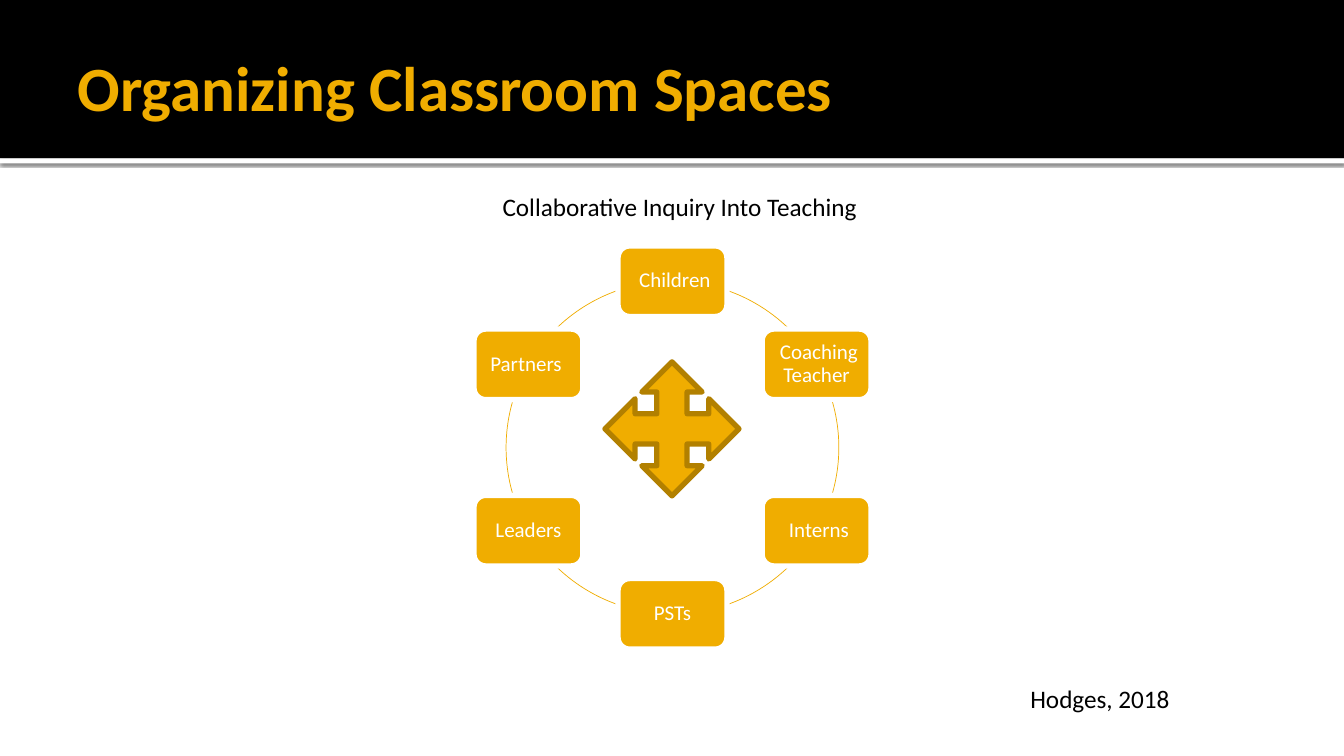
import math
import pptx
import pptx.util
import pptx.dml.color
import pptx.enum.shapes
import pptx.enum.text
import pptx.oxml

Inches = pptx.util.Inches
Pt = pptx.util.Pt
RGBColor = pptx.dml.color.RGBColor
SHAPE = pptx.enum.shapes.MSO_SHAPE
ALIGN = pptx.enum.text.PP_ALIGN
ANCHOR = pptx.enum.text.MSO_ANCHOR

GOLD = RGBColor(0xF0, 0xAD, 0x00)
BROWN = RGBColor(0xB2, 0x80, 0x00)
BLACK = RGBColor(0, 0, 0)
WHITE = RGBColor(255, 255, 255)

ROLES = [" Children", " Coaching Teacher", " Interns", "PSTs", "Leaders", "Partners "]
ARCS = [(-58.3, 12.6), (0, 16.6), (58.3, 12.6),
        (121.7, 12.6), (180, 16.6), (238.3, 12.6)]

SHADOW = (
    '<a:effectLst xmlns:a="http://schemas.openxmlformats.org/drawingml/2006/main">'
    '<a:outerShdw blurRad="31750" dist="10160" dir="5400000" algn="tl" rotWithShape="0">'
    '<a:srgbClr val="000000"><a:alpha val="60000"/></a:srgbClr>'
    '</a:outerShdw></a:effectLst>'
)


def add_form(slide, kind, box, fill=None, line=None, width=3.78):
    form = slide.shapes.add_shape(kind, *map(Inches, box))
    form.shadow.inherit = False
    if fill is None:
        form.fill.background()
    else:
        form.fill.solid()
        form.fill.fore_color.rgb = fill
    if line is None:
        form.line.fill.background()
    else:
        form.line.color.rgb = line
        form.line.width = Pt(width)
    return form


def set_text(form, text, size, color, align=ALIGN.CENTER):
    frame = form.text_frame
    frame.word_wrap = True
    para = frame.paragraphs[0]
    para.text = text
    para.alignment = align
    para.font.name = "Calibri"
    para.font.size = Pt(size)
    para.font.color.rgb = color
    return frame


def add_label(slide, box, text):
    set_text(slide.shapes.add_textbox(*map(Inches, box)), text, 18, BLACK)


def add_header(slide, box, text):
    left, top, width, height = box
    strip = add_form(slide, SHAPE.RECTANGLE, (left, top + height, width, 0.05), WHITE)
    props = strip.element.spPr
    props.remove(props.find(pptx.oxml.ns.qn("a:effectLst")))
    props.append(pptx.oxml.parse_xml(SHADOW))
    add_form(slide, SHAPE.RECTANGLE, box, BLACK)
    title = slide.shapes.add_textbox(
        *map(Inches, (left + 0.67, top + 0.17, width - 1.33, height - 0.2)))
    frame = set_text(title, text, 45, GOLD, ALIGN.LEFT)
    frame.vertical_anchor = ANCHOR.MIDDLE
    frame.margin_right = Inches(0.05)
    frame.paragraphs[0].font.bold = True


def add_node(slide, box, text):
    node = add_form(slide, SHAPE.ROUNDED_RECTANGLE, box, GOLD, WHITE)
    frame = set_text(node, text, 15, WHITE)
    frame.vertical_anchor = ANCHOR.MIDDLE
    frame.margin_left = frame.margin_right = Inches(0.09)
    frame.margin_top = frame.margin_bottom = Inches(0.06)
    frame.paragraphs[0].line_spacing = 0.9


def add_cycle(slide, box):
    left, top, size, _ = box
    radius = size / 2
    wide, high = 1.08, 0.7
    for middle, half in ARCS:
        arc = add_form(slide, SHAPE.ARC, box, None, GOLD, 0.5)
        for index, angle in enumerate((middle - half, middle + half)):
            arc.adjustments[index] = angle % 360 * 0.6
    for index, role in enumerate(ROLES):
        angle = math.radians(index * 360 / len(ROLES) - 90)
        across = left + radius + radius * math.cos(angle)
        down = top + radius + radius * math.sin(angle)
        add_node(slide, (across - wide / 2, down - high / 2, wide, high), role)
    add_form(slide, SHAPE.QUAD_ARROW,
             (left + radius - 0.67, top + 0.8, 1.33, 1.33), GOLD, BROWN)


def main():
    deck = pptx.Presentation()
    deck.slide_width = Inches(13.33)
    deck.slide_height = Inches(7.5)
    slide = deck.slides.add_slide(deck.slide_layouts[6])
    add_header(slide, (0, 0, 13.33, 1.57), "Organizing Classroom Spaces")
    add_label(slide, (3.42, 1.85, 6.7, 0.4), "Collaborative Inquiry Into Teaching ")
    add_cycle(slide, (5.02, 2.79, 3.3, 3.3))
    add_label(slide, (9.41, 6.73, 3, 0.4), "Hodges, 2018")
    deck.save("out.pptx")


if __name__ == "__main__":
    main()
